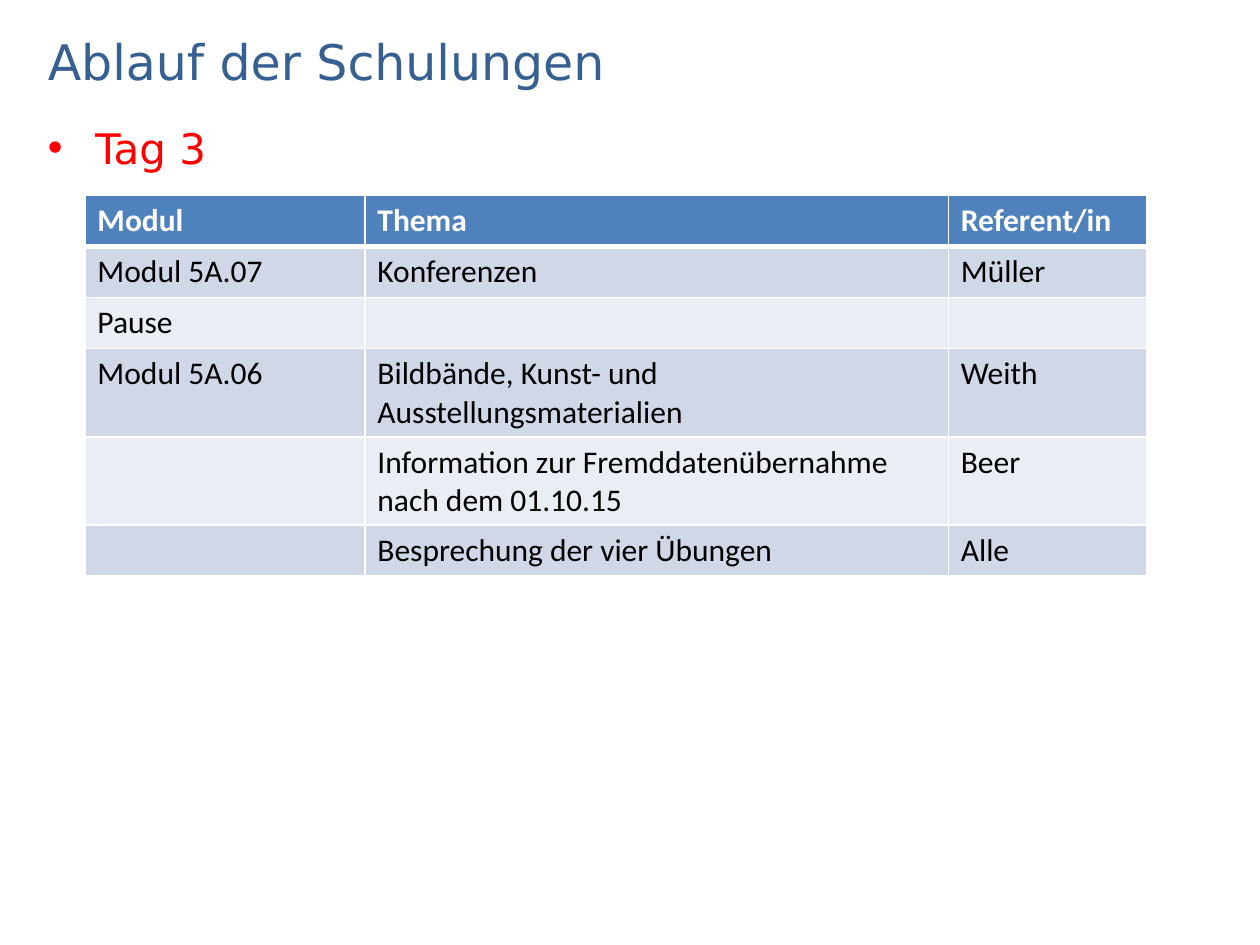
from typing import NamedTuple

from lxml.etree import SubElement
from pptx import Presentation
from pptx.dml.color import RGBColor
from pptx.enum.text import MSO_ANCHOR
from pptx.oxml.ns import qn
from pptx.util import Pt


class Label(NamedTuple):
    text: str
    top: float
    height: float
    size: float
    color: str
    anchor: MSO_ANCHOR


TITLE = Label("Ablauf der Schulungen", 14.4, 40.3, 28, "376092", MSO_ANCHOR.MIDDLE)
BODY = Label("Tag 3", 66.2, 430.6, 24, "FF0000", MSO_ANCHOR.TOP)

WIDTHS = [160, 333.4, 113.3]
ROW_HEIGHT = 29.2
ROWS = [
    ("Modul", "Thema", "Referent/in"),
    ("Modul 5A.07", "Konferenzen", "Müller"),
    ("Pause", "", ""),
    ("Modul 5A.06", "Bildbände, Kunst- und Ausstellungsmaterialien", "Weith"),
    ("", "Information zur Fremddatenübernahme nach dem 01.10.15", "Beer"),
    ("", "Besprechung der vier Übungen", "Alle"),
]
HEAD_FILL = "4F81BD"
BANDS = ["E9EDF4", "D0D8E8"]


def rgb(code: str) -> RGBColor:
    return RGBColor.from_string(code)


def style(para, font: str, size: float, color: str, bold: bool = False) -> None:
    for run in para.runs:
        run.font.name = font
        run.font.size = Pt(size)
        run.font.bold = bold
        run.font.color.rgb = rgb(color)


def add_label(slide, label: Label):
    box = slide.shapes.add_textbox(Pt(20.2), Pt(label.top), Pt(680.4), Pt(label.height))
    frame = box.text_frame
    frame.word_wrap = True
    frame.vertical_anchor = label.anchor
    frame.text = label.text
    para = frame.paragraphs[0]
    style(para, "DejaVu Sans", label.size, label.color)
    return para


def add_bullet(para, indent: float) -> None:
    """Give the paragraph a hanging bullet and 20 % space before."""
    props = para._p.get_or_add_pPr()
    props.set("marL", str(Pt(indent)))
    props.set("indent", str(-Pt(indent)))
    space = SubElement(props, qn("a:spcBef"))
    SubElement(space, qn("a:spcPct"), val="20000")
    SubElement(props, qn("a:buFont"), typeface="Arial")
    SubElement(props, qn("a:buChar"), char="•")


def add_edge(cell, side: str, width: float) -> None:
    props = cell._tc.get_or_add_tcPr()
    line = SubElement(props, qn(f"a:{side}"), w=str(Pt(width)))
    fill = SubElement(line, qn("a:solidFill"))
    SubElement(fill, qn("a:srgbClr"), val="FFFFFF")


def fill_cell(cell, text: str, row: int) -> None:
    head = row == 0
    cell.text = text
    style(cell.text_frame.paragraphs[0], "Calibri", 18,
          "FFFFFF" if head else "000000", head)
    for side in ("lnL", "lnR", "lnT", "lnB"):
        thick = (head and side == "lnB") or (row == 1 and side == "lnT")
        add_edge(cell, side, 3 if thick else 1)
    cell.fill.solid()
    cell.fill.fore_color.rgb = rgb(HEAD_FILL if head else BANDS[row % 2])


def add_plan(slide) -> None:
    frame = slide.shapes.add_table(
        len(ROWS), len(WIDTHS), Pt(48.5), Pt(111.6),
        Pt(sum(WIDTHS)), Pt(ROW_HEIGHT * len(ROWS)))
    table = frame.table
    for column, width in zip(table.columns, WIDTHS):
        column.width = Pt(width)
    for row, texts in enumerate(ROWS):
        table.rows[row].height = Pt(ROW_HEIGHT)
        for col, text in enumerate(texts):
            fill_cell(table.cell(row, col), text, row)


def main() -> None:
    deck = Presentation()
    deck.slide_width, deck.slide_height = Pt(720), Pt(540)
    slide = deck.slides.add_slide(deck.slide_layouts[6])
    add_label(slide, TITLE)
    add_bullet(add_label(slide, BODY), 27)
    add_plan(slide)
    deck.save("out.pptx")


if __name__ == "__main__":
    main()
